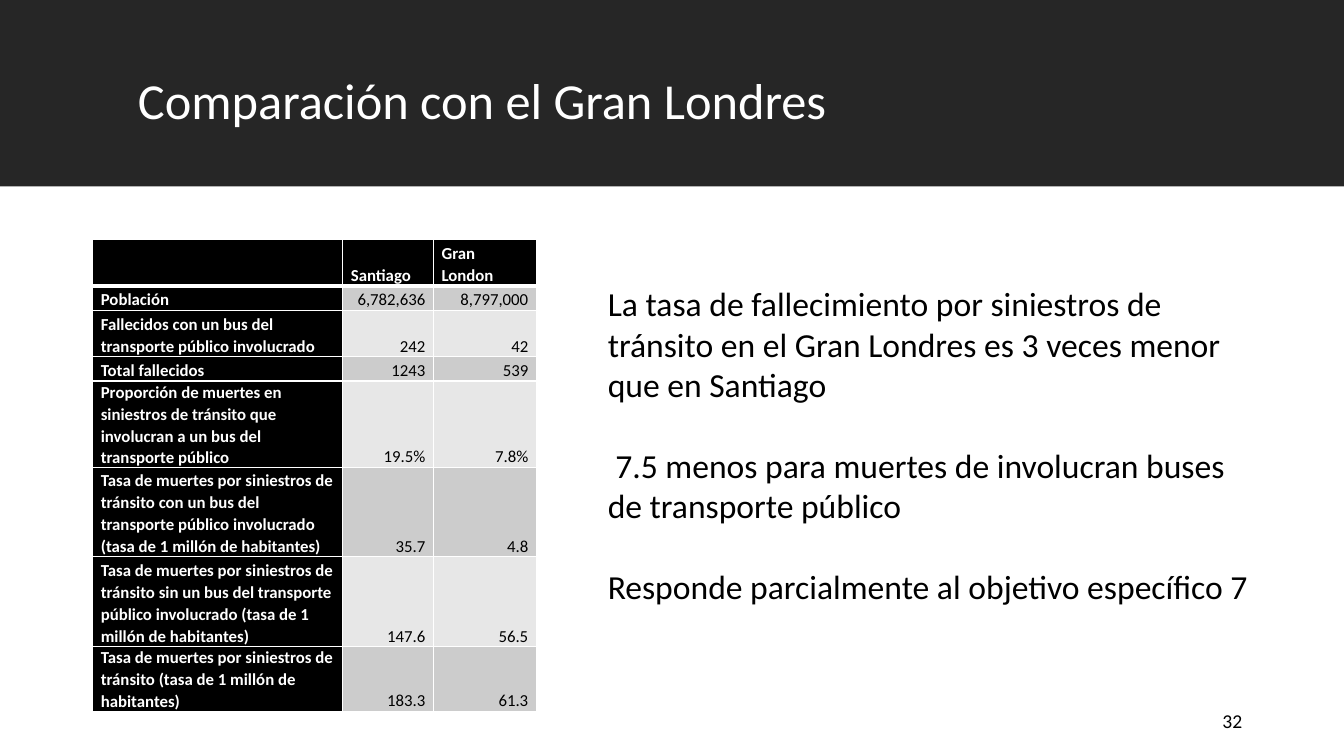
from lxml import etree
from pptx import Presentation
from pptx.dml.color import RGBColor
from pptx.enum.shapes import MSO_SHAPE
from pptx.enum.text import MSO_ANCHOR, PP_ALIGN
from pptx.oxml.ns import qn
from pptx.util import Inches, Pt

RECT = MSO_SHAPE.RECTANGLE
TOP, MIDDLE, BOTTOM = MSO_ANCHOR.TOP, MSO_ANCHOR.MIDDLE, MSO_ANCHOR.BOTTOM
LEFT, RIGHT = PP_ALIGN.LEFT, PP_ALIGN.RIGHT

FONT = "Calibri"
BLACK, WHITE, DARK = "000000", "FFFFFF", "262626"
BANDS = ("CCCCCC", "E7E7E7")

COLS = (2.48, 0.9, 1.02)
HEIGHTS = (0.46, 0.24, 0.46, 0.24, 0.68, 0.89, 0.89, 0.46)
RATE = "Tasa de muertes por siniestros de tránsito"
BASE = "(tasa de 1 millón de habitantes)"
ROWS = (
    ("", "Santiago", "Gran London"),
    ("Población", "6,782,636", "8,797,000"),
    ("Fallecidos con un bus del transporte público involucrado", "242", "42"),
    ("Total fallecidos", "1243", "539"),
    ("Proporción de muertes en siniestros de tránsito que involucran "
     "a un bus del transporte público", "19.5%", "7.8%"),
    (f"{RATE} con un bus del transporte público involucrado {BASE}", "35.7", "4.8"),
    (f"{RATE} sin un bus del transporte público involucrado {BASE}", "147.6", "56.5"),
    (f"{RATE} {BASE}", "183.3", "61.3"),
)
NOTES = (
    "La tasa de fallecimiento por siniestros de tránsito en el Gran Londres "
    "es 3 veces menor que en Santiago",
    " 7.5 menos para muertes de involucran buses de transporte público",
    "Responde parcialmente al objetivo específico 7",
)


def color(code):
    return RGBColor.from_string(code)


def paint(item, code):
    item.fill.solid()
    item.fill.fore_color.rgb = color(code)


def write(frame, *lines, size=12, ink=BLACK, bold=False, align=LEFT,
          spacing=1.0, gap=0):
    for i, line in enumerate(lines):
        para = frame.add_paragraph() if i else frame.paragraphs[0]
        para.alignment = align
        para.line_spacing = spacing
        if i:
            para.space_before = Pt(gap)
        run = para.add_run()
        run.text = line
        run.font.name = FONT
        run.font.size = Pt(size)
        run.font.bold = bold
        run.font.color.rgb = color(ink)


def add_text(slide, box, *lines, anchor=TOP, **style):
    frame = slide.shapes.add_textbox(*map(Inches, box)).text_frame
    frame.word_wrap = True
    frame.vertical_anchor = anchor
    write(frame, *lines, **style)


def add_band(slide, box, fill):
    band = slide.shapes.add_shape(RECT, *map(Inches, box))
    band.shadow.inherit = False
    paint(band, fill)
    band.line.fill.background()


def add_edges(cell, base):
    # Borders come before the fill in the cell properties
    props = cell._tc.get_or_add_tcPr()
    for i, (side, width) in enumerate(
            (("lnL", 1), ("lnR", 1), ("lnT", 1), ("lnB", base))):
        line = etree.Element(qn(f"a:{side}"), w=str(Pt(width)))
        fill = etree.SubElement(line, qn("a:solidFill"))
        etree.SubElement(fill, qn("a:srgbClr"), val=WHITE)
        props.insert(i, line)


def fill_cell(cell, text, row, col):
    head = row == 0 or col == 0
    paint(cell, BLACK if head else BANDS[(row - 1) % 2])
    add_edges(cell, 3 if row == 0 else 1)
    cell.vertical_anchor = BOTTOM
    cell.margin_left = cell.margin_right = Inches(0.08)
    cell.margin_top = cell.margin_bottom = 0
    if text:
        write(cell.text_frame, text, ink=WHITE if head else BLACK, bold=head,
              align=LEFT if head else RIGHT, spacing=1.07)


def add_rates(slide, left, top):
    table = slide.shapes.add_table(
        len(ROWS), len(COLS), Inches(left), Inches(top),
        Inches(sum(COLS)), Inches(sum(HEIGHTS))).table
    for col, width in zip(table.columns, COLS):
        col.width = Inches(width)
    for row, height in zip(table.rows, HEIGHTS):
        row.height = Inches(height)
    for r, texts in enumerate(ROWS):
        for c, text in enumerate(texts):
            fill_cell(table.cell(r, c), text, r, c)


def main():
    deck = Presentation()
    deck.slide_width, deck.slide_height = Inches(13.33), Inches(7.5)
    slide = deck.slides.add_slide(deck.slide_layouts[6])

    # Title band
    add_band(slide, (0, 0, 13.33, 1.85), DARK)
    add_text(slide, (1.27, 0.7, 10.81, 0.98), "Comparación con el Gran Londres",
             size=36, ink=WHITE, spacing=0.9)

    # Slide number
    add_text(slide, (9.42, 6.95, 3, 0.4), "32", size=14, align=RIGHT, anchor=MIDDLE)

    # Comparison table and findings
    add_rates(slide, 0.92, 2.38)
    add_text(slide, (5.93, 2.76, 6.67, 3.74), *NOTES, size=24, gap=29)

    deck.save("out.pptx")


if __name__ == "__main__":
    main()
